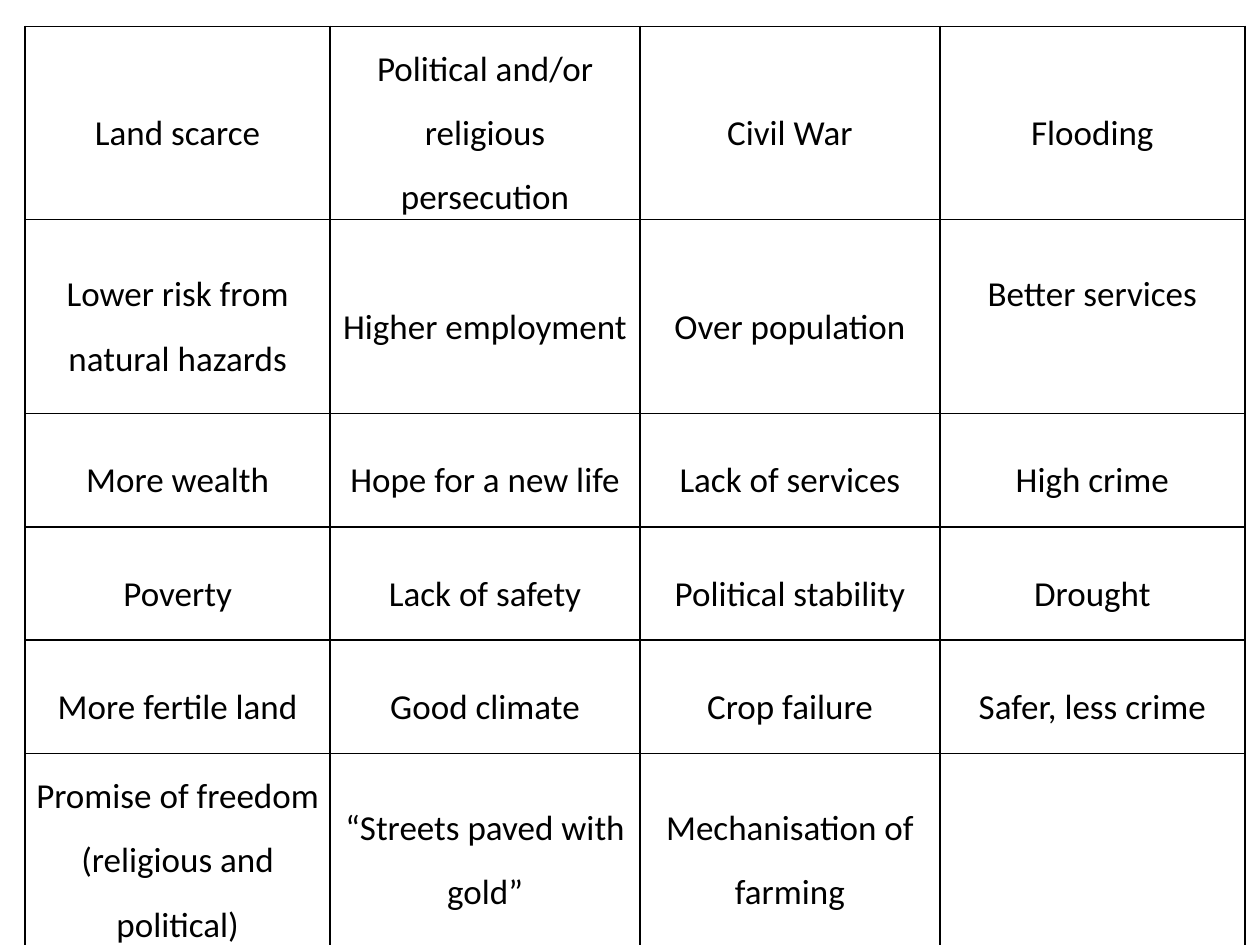
from dataclasses import dataclass

from lxml.etree import SubElement
from pptx import Presentation
from pptx.dml.color import RGBColor
from pptx.enum.text import MSO_ANCHOR, PP_ALIGN
from pptx.oxml.ns import qn
from pptx.util import Inches, Pt


@dataclass(frozen=True)
class Theme:
    font: str = "Calibri"
    size: int = 20
    ink: str = "000000"
    border: int = 1


theme = Theme()

rows = [
    ["Land scarce", "Political and/or religious persecution", "Civil War", "Flooding"],
    ["Lower risk from natural hazards", "Higher employment", "Over population", "Better services"],
    ["More wealth", "Hope for a new life", "Lack of services", "High crime"],
    ["Poverty", "Lack of safety", "Political stability", "Drought"],
    ["More fertile land", "Good climate", "Crop failure", "Safer, less crime"],
    ["Promise of freedom (religious and political)", "“Streets paved with gold”", "Mechanisation of farming", ""],
]
widths = [2.42, 2.46, 2.38, 2.42]
heights = [1.34, 1.54, 0.9, 0.9, 0.9, 1.37]


def add_borders(cell):
    tc_pr = cell._tc.get_or_add_tcPr()
    for side in ("a:lnL", "a:lnR", "a:lnT", "a:lnB"):
        ln = SubElement(tc_pr, qn(side), w=str(Pt(theme.border)))
        fill = SubElement(ln, qn("a:solidFill"))
        SubElement(fill, qn("a:srgbClr"), val=theme.ink)


prs = Presentation()
prs.slide_width = Inches(10)
prs.slide_height = Inches(7.5)
s = prs.slides.add_slide(prs.slide_layouts[6])

table = s.shapes.add_table(
    len(rows), len(widths), Inches(0.2), Inches(0.21), Inches(sum(widths)), Inches(sum(heights))
).table
table.first_row = False
table.horz_banding = False
for column, width in zip(table.columns, widths):
    column.width = Inches(width)
for row, height in zip(table.rows, heights):
    row.height = Inches(height)

for i, texts in enumerate(rows):
    for j, text in enumerate(texts):
        cell = table.cell(i, j)
        add_borders(cell)
        cell.fill.background()
        cell.vertical_anchor = MSO_ANCHOR.MIDDLE
        cell.margin_left = cell.margin_right = Inches(0.08)
        cell.margin_top = cell.margin_bottom = 0
        p = cell.text_frame.paragraphs[0]
        p.text = text
        p.alignment = PP_ALIGN.CENTER
        p.line_spacing = 1.5
        for r in p.runs:
            r.font.name = theme.font
            r.font.size = Pt(theme.size)
            r.font.color.rgb = RGBColor.from_string(theme.ink)

table.cell(1, 3).margin_bottom = Inches(0.51)

prs.save("out.pptx")
